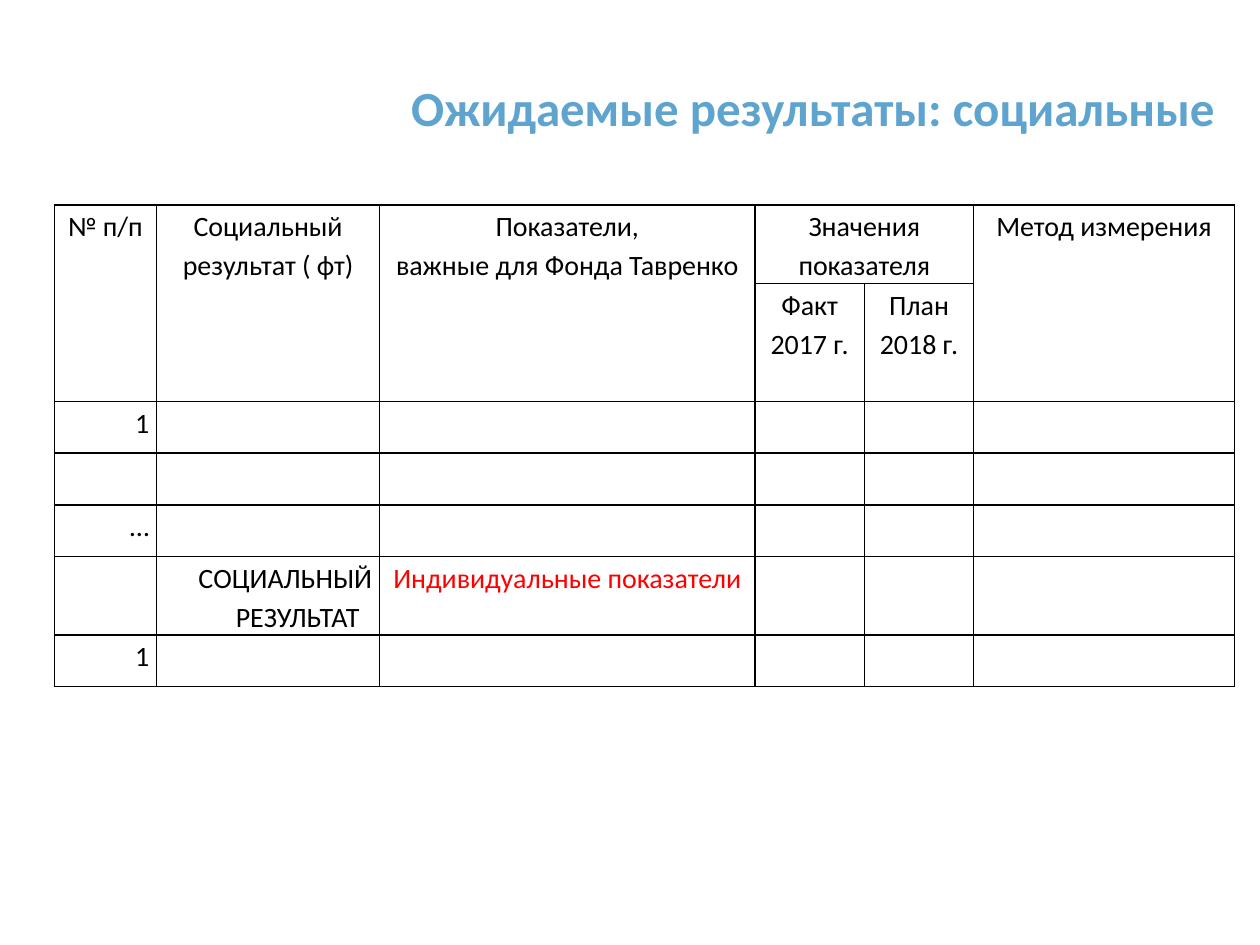
from pptx import Presentation
from pptx.dml.color import RGBColor
from pptx.enum.text import MSO_ANCHOR, PP_ALIGN
from pptx.oxml import parse_xml
from pptx.oxml.ns import nsdecls
from pptx.util import Pt

LEFT, MID, RIGHT = PP_ALIGN.LEFT, PP_ALIGN.CENTER, PP_ALIGN.RIGHT
MIDDLE = MSO_ANCHOR.MIDDLE
FACE = "Calibri"
BLUE = RGBColor(0x5E, 0xA4, 0xCF)
BLACK = RGBColor(0, 0, 0)
RED = RGBColor(0xFF, 0, 0)

COLS = [58.5, 127.5, 214.5, 62.5, 62.5, 149]
ROWS = [45, 67.5, 29.5, 29.5, 29.5, 45, 29.5]
SPANS = [(0, 0, 1, 0), (0, 1, 1, 1), (0, 2, 1, 2), (0, 3, 0, 4), (0, 5, 1, 5)]
CELLS = [
    (0, 0, "№ п/п", MID, BLACK),
    (0, 1, "Социальный результат ( фт)", MID, BLACK),
    (0, 2, "Показатели,\nважные для Фонда Тавренко", MID, BLACK),
    (0, 3, "Значения показателя", MID, BLACK),
    (0, 5, "Метод измерения", MID, BLACK),
    (1, 3, "Факт 2017 г.", MID, BLACK),
    (1, 4, "План 2018 г.", MID, BLACK),
    (2, 0, "1", RIGHT, BLACK),
    (4, 0, "…", RIGHT, BLACK),
    (5, 1, "СОЦИАЛЬНЫЙ РЕЗУЛЬТАТ  ", RIGHT, BLACK),
    (5, 2, "Индивидуальные показатели", MID, RED),
    (6, 0, "1", RIGHT, BLACK),
]


def style(par, size, color, align, lead, bold=False):
    """Format one paragraph."""
    par.alignment = align
    par.line_spacing = lead
    font = par.font
    font.name, font.size, font.bold = FACE, Pt(size), bold
    font.color.rgb = color


def add_title(slide, text):
    """Fill and place the title placeholder."""
    title = slide.shapes.title
    title.left, title.top = Pt(76.5), Pt(0)
    title.width, title.height = Pt(620.5), Pt(126)
    frame = title.text_frame
    frame.text = text
    frame.word_wrap = True
    frame.vertical_anchor = MIDDLE
    frame.margin_left = frame.margin_right = Pt(3)
    frame.margin_top = frame.margin_bottom = Pt(3)
    style(frame.paragraphs[0], 28, BLUE, RIGHT, 0.9, True)


def frame_cell(cell):
    """Give a cell thin margins, black borders and no fill."""
    cell.margin_left = cell.margin_right = Pt(4.3)
    cell.margin_top = cell.margin_bottom = Pt(0)
    props = cell._tc.get_or_add_tcPr()
    for side in "LRTB":
        props.append(parse_xml(
            f'<a:ln{side} {nsdecls("a")} w="{Pt(1)}"><a:solidFill>'
            f'<a:srgbClr val="{BLACK}"/></a:solidFill></a:ln{side}>'))
    cell.fill.background()


def add_grid(slide):
    """Build the table of social results."""
    shape = slide.shapes.add_table(len(ROWS), len(COLS), Pt(31), Pt(117),
                                   Pt(sum(COLS)), Pt(sum(ROWS)))
    table = shape.table
    table.first_row = table.horz_banding = False
    for col, width in zip(table.columns, COLS):
        col.width = Pt(width)
    for row, height in zip(table.rows, ROWS):
        row.height = Pt(height)
    for cell in table.iter_cells():
        frame_cell(cell)
    for top, left, low, right in SPANS:
        table.cell(top, left).merge(table.cell(low, right))
    for row, col, text, align, color in CELLS:
        frame = table.cell(row, col).text_frame
        frame.text = text
        for par in frame.paragraphs:
            style(par, 16, color, align, 1.15)


def main():
    """Build and save the slide."""
    deck = Presentation()
    deck.slide_width, deck.slide_height = Pt(720), Pt(540)
    slide = deck.slides.add_slide(deck.slide_layouts[5])
    add_title(slide, "Ожидаемые результаты: социальные")
    add_grid(slide)
    deck.save("out.pptx")


if __name__ == "__main__":
    main()
